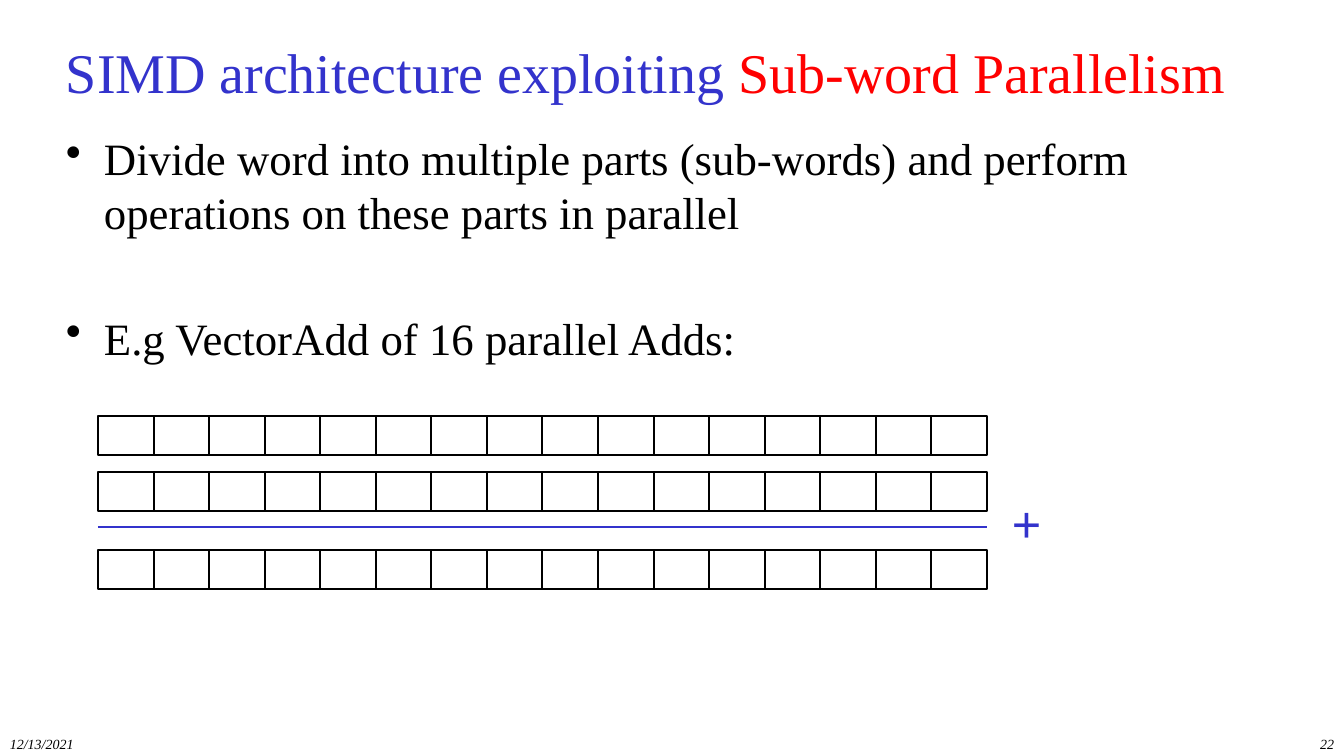
from dataclasses import dataclass

import lxml.etree
import pptx
import pptx.dml.color
import pptx.enum.shapes
import pptx.enum.text
import pptx.oxml.ns
import pptx.slide
import pptx.text.text
import pptx.util

EMU_PER_PX = 914400 / 100.8
SERIF = "Times New Roman"
BLACK, BLUE, RED = "000000", "3333CC", "FF0000"
LEFT, RIGHT = pptx.enum.text.PP_ALIGN.LEFT, pptx.enum.text.PP_ALIGN.RIGHT
TOP, MIDDLE = pptx.enum.text.MSO_ANCHOR.TOP, pptx.enum.text.MSO_ANCHOR.MIDDLE

VECTOR_LEFT, VECTOR_RIGHT = 98, 987
SUB_WORDS = 16
CELL_HEIGHT = 39
VECTOR_TOPS = (416, 472, 550)
SUM_LINE_Y = 527
BULLET_INDENT = 38


@dataclass(frozen=True)
class Label:
    left: int
    top: int
    width: int
    height: int
    runs: tuple[tuple[str, str], ...]
    size: int
    font: str = SERIF
    italic: bool = False
    align: pptx.enum.text.PP_ALIGN = LEFT
    anchor: pptx.enum.text.MSO_ANCHOR = TOP
    wrap: bool = True


@dataclass(frozen=True)
class Bullet:
    text: str
    space_before: int


LABELS = (
    Label(56, 33, 1254, 76,
          (("SIMD architecture exploiting ", BLUE), ("Sub-word Parallelism", RED)),
          40, anchor=MIDDLE),
    Label(0, 731, 168, 25, (("12/13/2021", BLACK),), 10, italic=True),
    Label(1064, 731, 280, 25, (("22", BLACK),), 10, italic=True, align=RIGHT),
    Label(1002, 487, 50, 71, (("+", BLUE),), 36, font="Arial", wrap=False),
)
BULLETS = (
    Bullet("Divide word into multiple parts (sub-words) and perform "
           "operations on these parts in parallel", 0),
    Bullet("E.g VectorAdd of 16 parallel Adds:", 51),
)


def px(length: int) -> pptx.util.Emu:
    return pptx.util.Emu(round(length * EMU_PER_PX))


def color(value: str) -> pptx.dml.color.RGBColor:
    return pptx.dml.color.RGBColor.from_string(value)


def add_label(slide: pptx.slide.Slide, label: Label) -> None:
    shape = slide.shapes.add_textbox(
        px(label.left), px(label.top), px(label.width), px(label.height))
    frame = shape.text_frame
    frame.word_wrap = label.wrap
    frame.vertical_anchor = label.anchor
    paragraph = frame.paragraphs[0]
    paragraph.alignment = label.align
    paragraph.font.name = label.font
    paragraph.font.size = pptx.util.Pt(label.size)
    paragraph.font.italic = label.italic
    for text, run_color in label.runs:
        run = paragraph.add_run()
        run.text = text
        run.font.color.rgb = color(run_color)


def set_bullet(paragraph: pptx.text.text._Paragraph) -> None:
    """Give the paragraph a round bullet with a hanging indent."""
    properties = paragraph._p.get_or_add_pPr()
    properties.set("marL", str(px(BULLET_INDENT)))
    properties.set("indent", str(-px(BULLET_INDENT)))
    mark = lxml.etree.Element(pptx.oxml.ns.qn("a:buChar"), char="•")
    defaults = properties.find(pptx.oxml.ns.qn("a:defRPr"))
    defaults.addprevious(mark)


def add_bullets(slide: pptx.slide.Slide) -> None:
    shape = slide.shapes.add_textbox(px(56), px(126), px(1254), px(588))
    frame = shape.text_frame
    frame.word_wrap = True
    for index, bullet in enumerate(BULLETS):
        paragraph = frame.add_paragraph() if index else frame.paragraphs[0]
        paragraph.text = bullet.text
        paragraph.line_spacing = pptx.util.Pt(38.5)
        paragraph.space_before = pptx.util.Pt(bullet.space_before)
        paragraph.font.name = SERIF
        paragraph.font.size = pptx.util.Pt(32)
        paragraph.font.color.rgb = color(BLACK)
        set_bullet(paragraph)


def add_vector(slide: pptx.slide.Slide, top: int) -> None:
    """Draw one word as a row of touching sub-word cells."""
    span = VECTOR_RIGHT - VECTOR_LEFT
    edges = [VECTOR_LEFT + round(span * i / SUB_WORDS) for i in range(SUB_WORDS + 1)]
    for left, right in zip(edges, edges[1:]):
        cell = slide.shapes.add_shape(
            pptx.enum.shapes.MSO_SHAPE.RECTANGLE,
            px(left), px(top), px(right - left), px(CELL_HEIGHT))
        cell.shadow.inherit = False
        cell.fill.background()
        cell.line.color.rgb = color(BLACK)
        cell.line.width = pptx.util.Pt(2)


def add_sum_line(slide: pptx.slide.Slide) -> None:
    line = slide.shapes.add_connector(
        pptx.enum.shapes.MSO_CONNECTOR.STRAIGHT,
        px(VECTOR_LEFT), px(SUM_LINE_Y), px(VECTOR_RIGHT), px(SUM_LINE_Y))
    line.line.color.rgb = color(BLUE)
    line.line.width = pptx.util.Pt(2)
    lxml.etree.SubElement(line._element.spPr, pptx.oxml.ns.qn("a:effectLst"))


def main() -> None:
    presentation = pptx.Presentation()
    presentation.slide_width = px(1344)
    presentation.slide_height = px(756)
    slide = presentation.slides.add_slide(presentation.slide_layouts[6])
    add_bullets(slide)
    for top in VECTOR_TOPS:
        add_vector(slide, top)
    add_sum_line(slide)
    for label in LABELS:
        add_label(slide, label)
    presentation.save("out.pptx")


if __name__ == "__main__":
    main()
